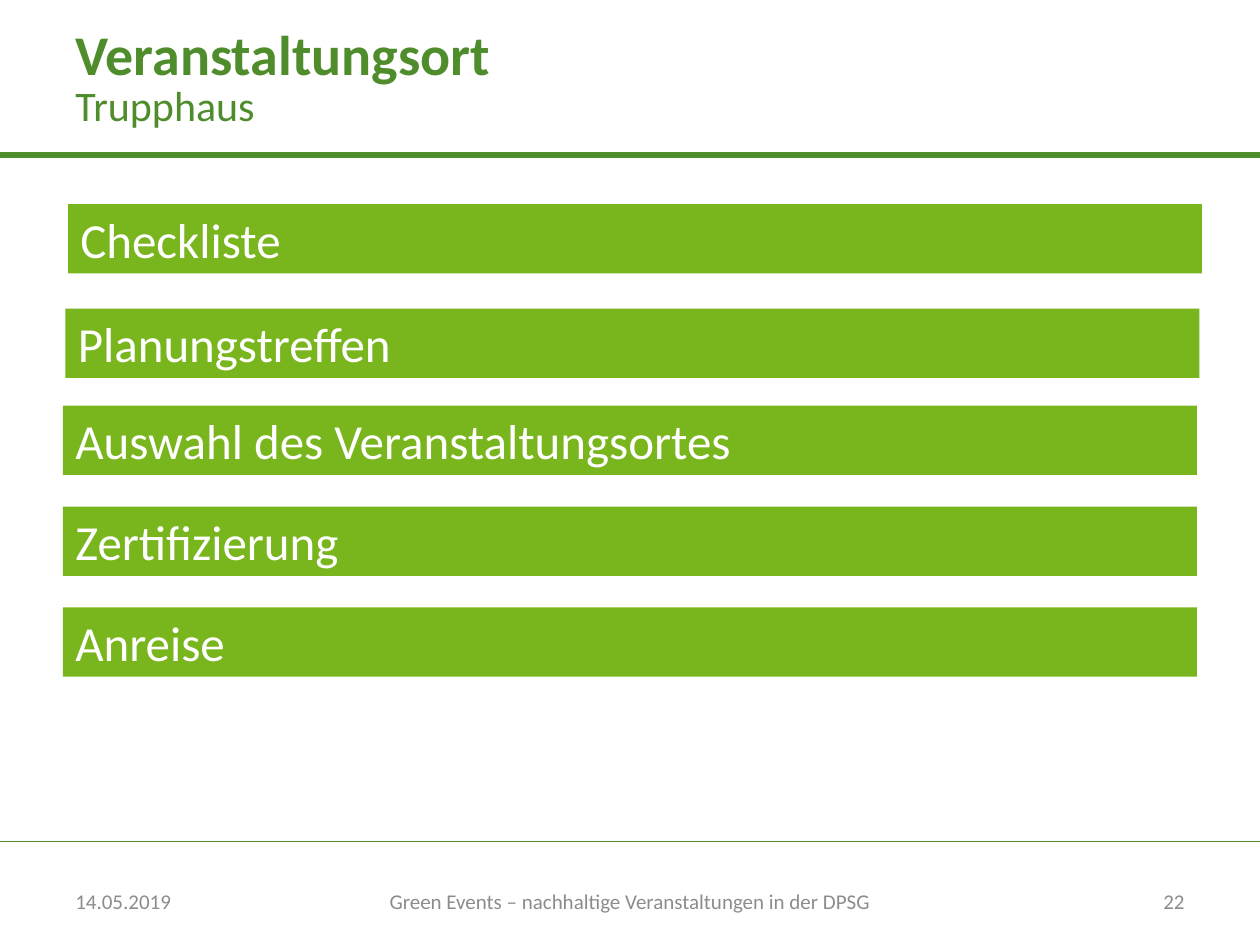
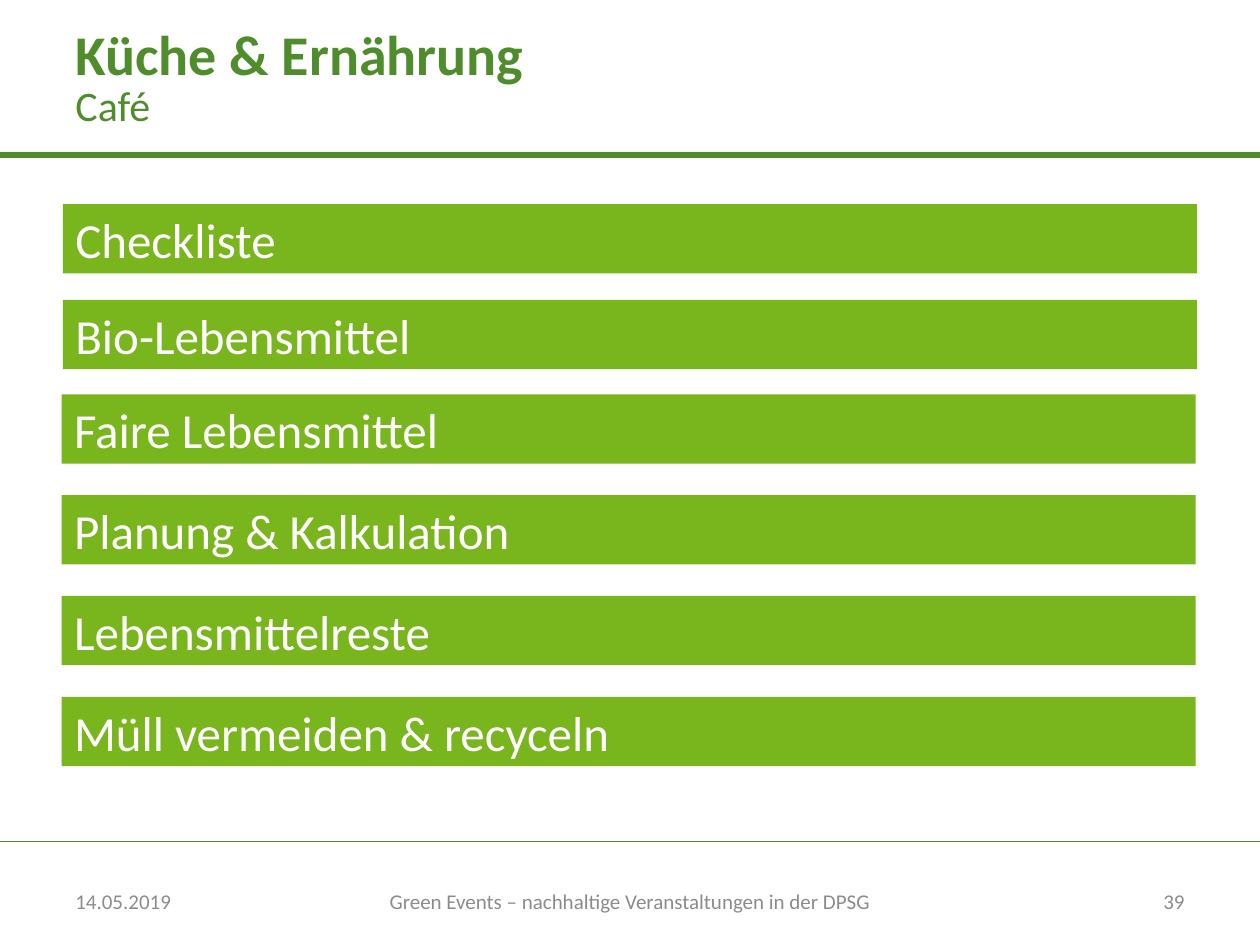
from pptx import Presentation
from pptx.dml.color import RGBColor
from pptx.enum.shapes import MSO_CONNECTOR, MSO_SHAPE
from pptx.enum.text import MSO_ANCHOR, PP_ALIGN
from pptx.oxml.ns import qn
from pptx.util import Inches, Pt
from lxml.etree import SubElement

# Shared style
COLORS = {"dark": "4F8D2C", "bar": "79B51C", "white": "FFFFFF", "grey": "8C8C8C"}
FONT = "Calibri"
W, H = 10, 7.5
MARGIN = W * 0.05
BAR_W, BAR_H = W * 0.9, 0.55
FOOT_TOP, FOOT_H, FOOT_W = 6.95, 0.4, 2.33
FOOT_MID_W = 4.02
RULES = [(6.68, 0.75), (1.23, 3)]  # top, line width
DATE = "14.05.2019"
EVENT = "Green Events – nachhaltige Veranstaltungen in der DPSG"

# Slide content; each bar is text, left, top
SLIDES = [
    ("Veranstaltungsort", "Trupphaus", "22", [
        ("Checkliste", 0.54, 1.62),
        ("Planungstreffen", 0.52, 2.45),
        ("Auswahl des Veranstaltungsortes", 0.5, 3.22),
        ("Zertifizierung", 0.5, 4.02),
        ("Anreise", 0.5, 4.82),
    ]),
    ("Küche & Ernährung", "Café", "39", [
        ("Checkliste", 0.5, 1.62),
        ("Bio-Lebensmittel", 0.5, 2.38),
        ("Faire Lebensmittel", 0.49, 3.13),
        ("Planung & Kalkulation", 0.49, 3.93),
        ("Lebensmittelreste", 0.49, 4.73),
        ("Müll vermeiden & recyceln", 0.49, 5.53),
    ]),
]


def rgb(name):
    return RGBColor.from_string(COLORS[name])


def add_text(s, text, box, size, color, align=PP_ALIGN.LEFT, bold=False, fill=None):
    box = [Inches(v) for v in box]
    if fill:
        sp = s.shapes.add_shape(MSO_SHAPE.RECTANGLE, *box)
        sp.shadow.inherit = False
        sp.fill.solid()
        sp.fill.fore_color.rgb = rgb(fill)
        sp.line.fill.background()
    else:
        sp = s.shapes.add_textbox(*box)
    tf = sp.text_frame
    tf.word_wrap = True
    tf.vertical_anchor = MSO_ANCHOR.MIDDLE
    p = tf.paragraphs[0]
    p.alignment = align
    r = p.add_run()
    r.text = text
    r.font.name = FONT
    r.font.size = Pt(size)
    r.font.bold = bold
    r.font.color.rgb = rgb(color)


prs = Presentation()
prs.slide_width, prs.slide_height = Inches(W), Inches(H)

for title, subtitle, number, bars in SLIDES:
    s = prs.slides.add_slide(prs.slide_layouts[6])

    # Rules under the title and above the footer
    for top, width in RULES:
        line = s.shapes.add_connector(
            MSO_CONNECTOR.STRAIGHT, 0, Inches(top), Inches(W), Inches(top))
        line.line.color.rgb = rgb("dark")
        line.line.width = Pt(width)
        SubElement(line._element.spPr, qn("a:effectLst"))

    # Title and subtitle
    add_text(s, title, (MARGIN, 0.01, W * 2 / 3, 0.82), 32, "dark", bold=True)
    add_text(s, subtitle, (MARGIN, 0.6, W * 2 / 3, 0.47), 24, "dark")

    # Topic bars
    for text, left, top in bars:
        add_text(s, text, (left, top, BAR_W, BAR_H), 28, "white", fill="bar")

    # Footer
    for text, left, width, align in [
        (DATE, MARGIN, FOOT_W, PP_ALIGN.LEFT),
        (EVENT, (W - FOOT_MID_W) / 2, FOOT_MID_W, PP_ALIGN.CENTER),
        (number, W - MARGIN - FOOT_W, FOOT_W, PP_ALIGN.RIGHT),
    ]:
        add_text(s, text, (left, FOOT_TOP, width, FOOT_H), 12, "grey", align)

prs.save("out.pptx")
